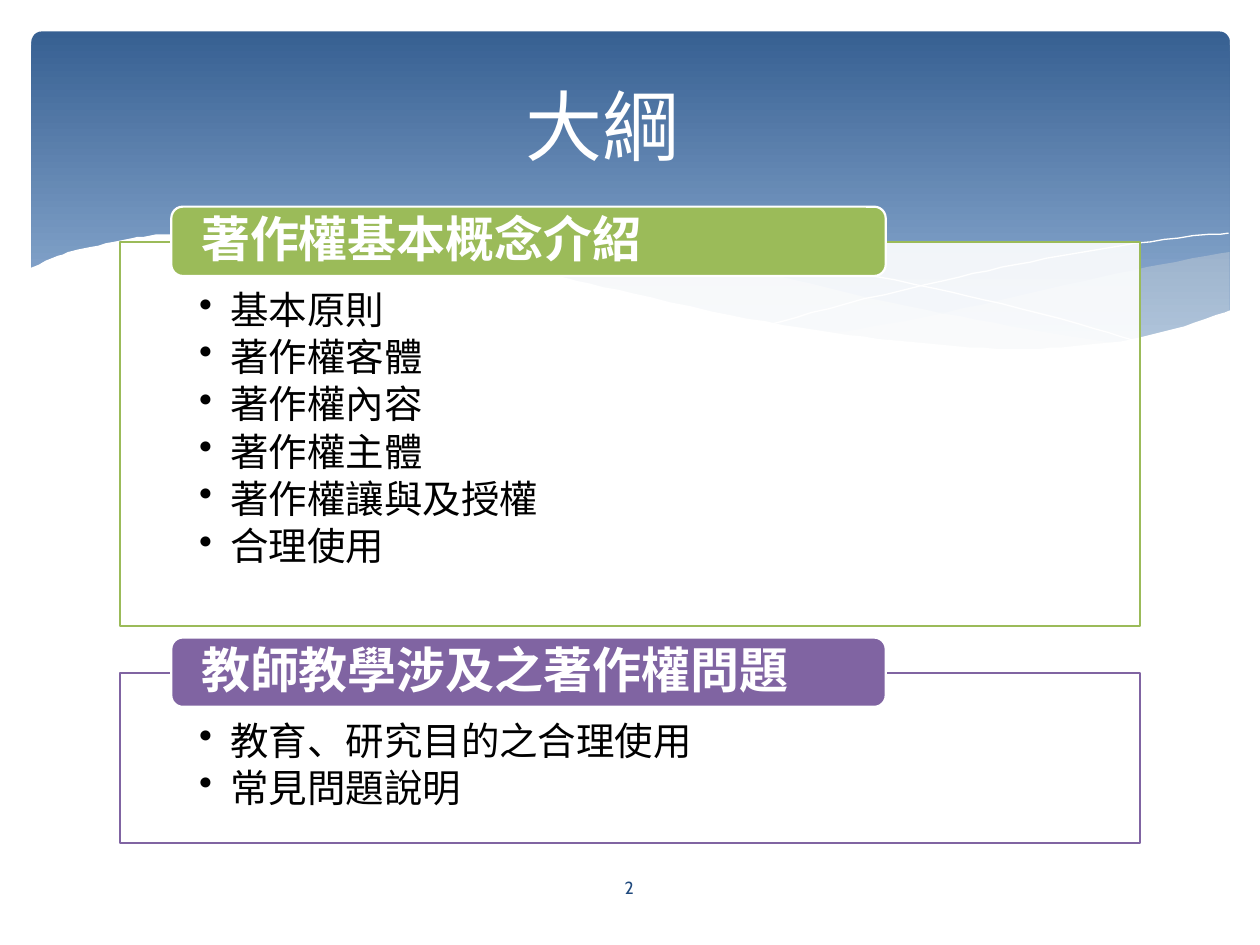
import dataclasses
import typing

import lxml.etree
import pptx
import pptx.dml.color
import pptx.enum.shapes
import pptx.enum.text
import pptx.oxml.ns
import pptx.util

SCALE = 9144  # EMU in one px, at 100 px to the inch
FONT = "Cabin"
WHITE = "FFFFFF"
SHAPES = pptx.enum.shapes.MSO_SHAPE
ANCHORS = pptx.enum.text.MSO_ANCHOR
ALIGNS = pptx.enum.text.PP_ALIGN
Point = tuple[float, float]


@dataclasses.dataclass
class Wave:
    curves: list[list[Point]]  # smooth edges, joined one after another
    fill: str | None = None
    opacity: int = 100
    line: str | None = None


@dataclasses.dataclass
class Section:
    heading: str
    items: list[str]
    color: str
    top: int
    height: int


WAVES = [
    Wave([[(976, 200), (921, 210), (861, 223), (779, 242), (706, 257), (661, 265)],
          [(661, 265), (719, 271), (769, 277), (814, 278), (863, 275),
           (913, 267), (949, 257), (976, 247)]], "EEECE1", 29),
    Wave([[(893, 273), (837, 265), (775, 254), (706, 240), (629, 222), (569, 208),
           (514, 198), (465, 191), (420, 187), (380, 185), (344, 186), (313, 188),
           (286, 191)],
          [(286, 191), (342, 199), (404, 211), (449, 222), (530, 240), (601, 255),
           (665, 266), (722, 274), (773, 277), (818, 278), (857, 277), (893, 273)]],
         "EEECE1", 40),
    Wave([[(309, 195), (344, 190), (387, 187), (433, 187), (489, 190), (556, 197),
           (636, 208), (727, 226), (795, 241), (869, 261), (907, 272)]], line=WHITE),
    Wave([[(613, 257), (672, 241), (748, 223), (806, 210), (866, 199), (924, 190),
           (975, 185)]], line=WHITE),
    Wave([[(977, 246), (940, 259), (899, 269), (850, 275), (809, 277), (761, 275),
           (708, 270), (648, 262), (579, 250), (503, 233), (447, 220), (391, 207),
           (340, 197), (292, 190), (250, 186), (211, 184), (177, 184), (146, 185),
           (119, 187), (95, 191), (67, 197), (46, 203), (23, 213)],
          [(23, 329), (977, 329)]], WHITE),
]

SECTIONS = [
    Section("著作權基本概念介紹",
            ["基本原則", "著作權客體", "著作權內容", "著作權主體", "著作權讓與及授權", "合理使用"],
            "9BBB59", 192, 305),
    Section("教師教學涉及之著作權問題",
            ["教育、研究目的之合理使用", "常見問題說明"],
            "8064A2", 534, 135),
]


def px(length: float) -> pptx.util.Emu:
    return pptx.util.Emu(round(length * SCALE))


def rgb(color: str) -> pptx.dml.color.RGBColor:
    return pptx.dml.color.RGBColor.from_string(color)


def apply(target: typing.Any, values: dict[str, typing.Any]) -> None:
    for name, value in values.items():
        setattr(target, name, value)


def paint(shape: typing.Any, fill: str | None, opacity: int = 100,
          line: str | None = None, weight: float = 1.25) -> None:
    shape.shadow.inherit = False
    if fill:
        shape.fill.solid()
        shape.fill.fore_color.rgb = rgb(fill)
        if opacity < 100:
            color = shape.fill._xPr.find(".//" + pptx.oxml.ns.qn("a:srgbClr"))
            lxml.etree.SubElement(color, pptx.oxml.ns.qn("a:alpha"), val=str(opacity * 1000))
    else:
        shape.fill.background()
    if line:
        shape.line.color.rgb = rgb(line)
        shape.line.width = pptx.util.Pt(weight)
    else:
        shape.line.fill.background()


def smooth_curve(knots: list[Point], steps: int = 5) -> list[Point]:
    """Catmull-Rom curve through the knots."""
    if len(knots) == 2:
        return knots
    ends = [knots[0], *knots, knots[-1]]
    points = [knots[0]]
    for a, b, c, d in zip(ends, ends[1:], ends[2:], ends[3:]):
        for step in range(1, steps + 1):
            t = step / steps
            x, y = (
                (2 * q + (r - p) * t + (2 * p - 5 * q + 4 * r - s) * t ** 2
                 + (3 * q - p - 3 * r + s) * t ** 3) / 2
                for p, q, r, s in zip(a, b, c, d))
            points.append((x, y))
    return points


def draw_wave(page: typing.Any, wave: Wave) -> None:
    points = [point for knots in wave.curves for point in smooth_curve(knots)]
    builder = page.shapes.build_freeform(*points[0], scale=SCALE)
    builder.add_line_segments(points[1:], close=wave.fill is not None)
    paint(builder.convert_to_shape(), wave.fill, wave.opacity, wave.line, 0)


def write(box: typing.Any, lines: list[str], size: int, color: str, *,
          bold: bool = False, align: typing.Any = ALIGNS.LEFT,
          anchor: typing.Any = ANCHORS.MIDDLE, margins: tuple = (10, 5, 10, 5),
          spacing: float = 1.0, after: int = 0, bullet: str = "") -> None:
    left, top, right, bottom = map(px, margins)
    frame = box.text_frame
    apply(frame, {"word_wrap": True, "vertical_anchor": anchor, "margin_left": left,
                  "margin_top": top, "margin_right": right, "margin_bottom": bottom})
    for index, line in enumerate(lines):
        para = frame.add_paragraph() if index else frame.paragraphs[0]
        apply(para, {"alignment": align, "line_spacing": spacing,
                     "space_before": pptx.util.Pt(0), "space_after": pptx.util.Pt(0)})
        properties = para._p.get_or_add_pPr()
        if after:  # percentage of the text size
            gap = properties.find(pptx.oxml.ns.qn("a:spcAft"))
            gap.remove(gap[0])
            lxml.etree.SubElement(gap, pptx.oxml.ns.qn("a:spcPct"), val=str(after * 1000))
        if bullet:
            para.level = 1
            properties.set("marL", str(px(25)))
            properties.set("indent", str(px(-25)))
            lxml.etree.SubElement(properties, pptx.oxml.ns.qn("a:buChar"), char=bullet)
        span = para.add_run()
        span.text = line
        apply(span.font, {"name": FONT, "size": pptx.util.Pt(size), "bold": bold})
        span.font.color.rgb = rgb(color)


def draw_section(page: typing.Any, section: Section) -> None:
    box = page.shapes.add_shape(SHAPES.RECTANGLE, px(95), px(section.top),
                                px(810), px(section.height))
    paint(box, WHITE, 90, section.color)
    write(box, section.items, 22, "000000", anchor=ANCHORS.TOP,
          margins=(63, 39, 63, 17), spacing=0.9, after=15, bullet="•")
    tab = page.shapes.add_shape(SHAPES.ROUNDED_RECTANGLE, px(136), px(section.top - 28),
                                px(567), px(55))
    paint(tab, section.color, line=WHITE)
    write(tab, [section.heading], 28, WHITE, bold=True,
          margins=(21, 0, 21, 0), spacing=0.9, after=35)


def draw_banner(page: typing.Any) -> None:
    banner = page.shapes.add_shape(SHAPES.ROUNDED_RECTANGLE, px(25), px(25), px(951), px(270))
    banner.adjustments[0] = 0.03
    paint(banner, None)
    banner.fill.gradient()
    banner.fill.gradient_angle = 270
    for stop, (position, color) in zip(banner.fill.gradient_stops,
                                       [(0, "376092"), (0.9, "95B3D7")]):
        stop.position = position
        stop.color.rgb = rgb(color)


def main() -> None:
    deck = pptx.Presentation()
    apply(deck, {"slide_width": px(1000), "slide_height": px(750)})
    page = deck.slides.add_slide(deck.slide_layouts[6])

    # Banner with waves
    draw_banner(page)
    for wave in WAVES:
        draw_wave(page, wave)

    # Outline sections
    for section in SECTIONS:
        draw_section(page, section)

    # Title and page number
    title = page.shapes.add_textbox(px(28), px(52), px(900), px(94))
    write(title, ["大綱"], 44, WHITE, align=ALIGNS.CENTER)
    number = page.shapes.add_textbox(px(436), px(684), px(127), px(40))
    write(number, ["2"], 10, "1F497D", align=ALIGNS.CENTER)

    deck.save("out.pptx")


if __name__ == "__main__":
    main()
